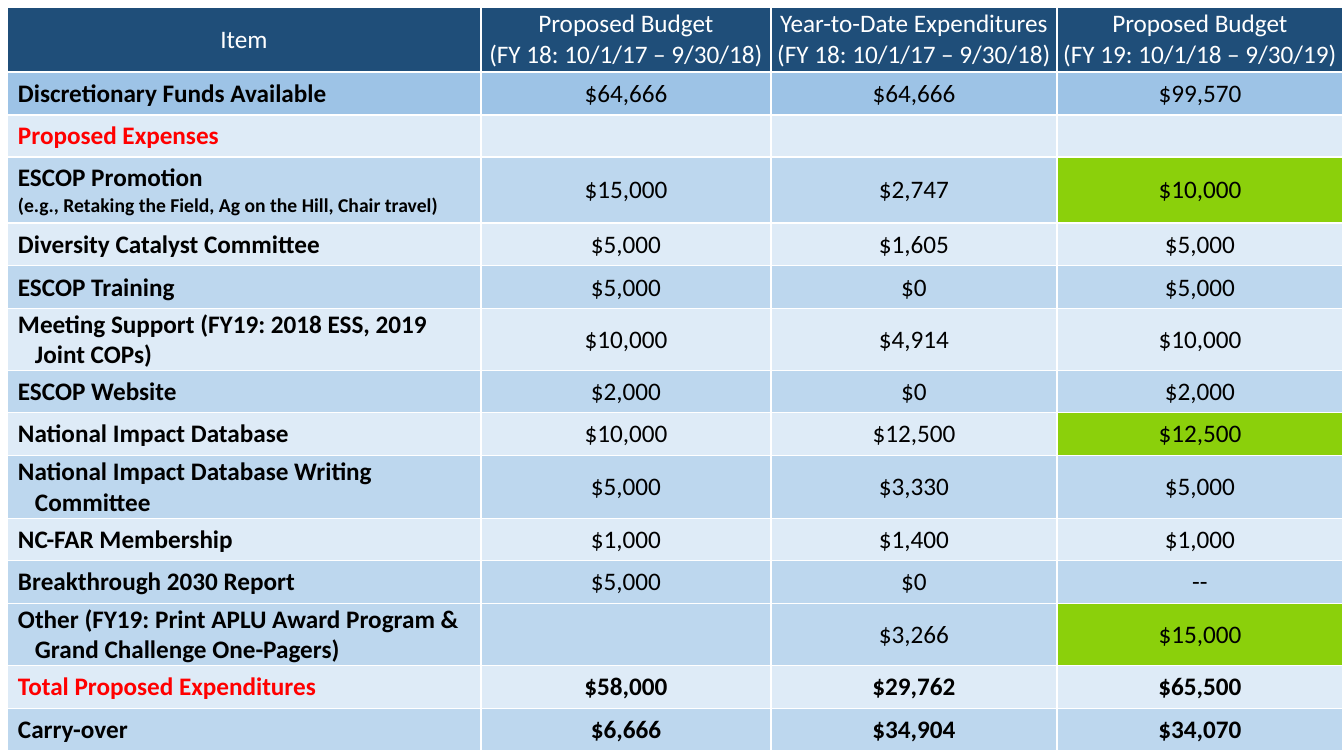
from lxml.etree import SubElement
from pptx import Presentation
from pptx.dml.color import RGBColor
from pptx.enum.text import MSO_ANCHOR, PP_ALIGN
from pptx.oxml.ns import qn
from pptx.util import Pt

PX = 9071  # EMU per px, 100.8 px to the inch

WHITE = RGBColor(0xFF, 0xFF, 0xFF)
BLACK = RGBColor(0x00, 0x00, 0x00)
RED = RGBColor(0xFF, 0x00, 0x00)
NAVY = RGBColor(0x1F, 0x4E, 0x79)
BLUE = RGBColor(0x9D, 0xC3, 0xE6)
MID = RGBColor(0xBD, 0xD7, 0xEE)
PALE = RGBColor(0xDE, 0xEB, 0xF7)
GREEN = RGBColor(0x8B, 0xD0, 0x0B)

COLUMN_WIDTHS = [474, 290, 286, 286]
FY18 = "(FY 18: 10/1/17 – 9/30/18)"
FY19 = "(FY 19: 10/1/18 – 9/30/19)"

# Row height, row fill, then the four cell texts
BUDGET = [
    (65, NAVY, "Item", f"Proposed Budget\n{FY18}",
     f"Year-to-Date Expenditures\n{FY18}", f"Proposed Budget\n{FY19}"),
    (43, BLUE, "Discretionary Funds Available", "$64,666", "$64,666", "$99,570"),
    (42, PALE, "Proposed Expenses", "", "", ""),
    (66, MID, "ESCOP Promotion\n(e.g., Retaking the Field, Ag on the Hill, Chair travel)",
     "$15,000", "$2,747", "$10,000"),
    (43, PALE, "Diversity Catalyst Committee", "$5,000", "$1,605", "$5,000"),
    (43, MID, "ESCOP Training", "$5,000", "$0", "$5,000"),
    (62, PALE, "Meeting Support (FY19: 2018 ESS, 2019\nJoint COPs)",
     "$10,000", "$4,914", "$10,000"),
    (42, MID, "ESCOP Website", "$2,000", "$0", "$2,000"),
    (43, PALE, "National Impact Database", "$10,000", "$12,500", "$12,500"),
    (63, MID, "National Impact Database Writing\nCommittee", "$5,000", "$3,330", "$5,000"),
    (42, PALE, "NC-FAR Membership", "$1,000", "$1,400", "$1,000"),
    (43, MID, "Breakthrough 2030 Report", "$5,000", "$0", "--"),
    (62, MID, "Other (FY19: Print APLU Award Program &\nGrand Challenge One-Pagers)",
     "", "$3,266", "$15,000"),
    (43, PALE, "Total Proposed Expenditures", "$58,000", "$29,762", "$65,500"),
    (42, MID, "Carry-over", "$6,666", "$34,904", "$34,070"),
]
RED_ITEMS = {"Proposed Expenses", "Total Proposed Expenditures"}
SUMMARY_ITEMS = {"Total Proposed Expenditures", "Carry-over"}
RAISED_ROWS = {3, 8, 12}  # FY 19 amounts marked in green


def add_white_borders(cell):
    properties = cell._tc.get_or_add_tcPr()
    for position, side in enumerate(("a:lnL", "a:lnR", "a:lnT", "a:lnB")):
        border = SubElement(properties, qn(side), w=str(Pt(1)))
        line_fill = SubElement(border, qn("a:solidFill"))
        SubElement(line_fill, qn("a:srgbClr"), val=str(WHITE))
        properties.insert(position, border)  # borders come before the fill


# Slide
deck = Presentation()
deck.slide_width, deck.slide_height = 1344 * PX, 756 * PX
slide = deck.slides.add_slide(deck.slide_layouts[6])

# Budget table
budget = slide.shapes.add_table(
    len(BUDGET), len(COLUMN_WIDTHS), 7 * PX, 7 * PX,
    sum(COLUMN_WIDTHS) * PX, sum(row[0] for row in BUDGET) * PX).table
for column, width in zip(budget.columns, COLUMN_WIDTHS):
    column.width = width * PX

for r, (height, row_fill, *texts) in enumerate(BUDGET):
    budget.rows[r].height = height * PX
    item = texts[0]
    for c, text in enumerate(texts):
        is_header = r == 0
        is_item = c == 0 and not is_header
        cell = budget.cell(r, c)
        cell.margin_left = 11 * PX if is_item else 0
        cell.margin_right = cell.margin_top = cell.margin_bottom = 0
        cell.vertical_anchor = MSO_ANCHOR.MIDDLE
        cell.fill.solid()
        cell.fill.fore_color.rgb = GREEN if c == 3 and r in RAISED_ROWS else row_fill
        add_white_borders(cell)

        cell.text = text
        for line, paragraph in enumerate(cell.text_frame.paragraphs):
            is_note = paragraph.text.startswith("(e.g.")
            paragraph.alignment = PP_ALIGN.LEFT if is_item else PP_ALIGN.CENTER
            if is_item and line and not is_note:  # indent the continuation line
                paragraph._p.get_or_add_pPr().set("marL", str(17 * PX))
            font = paragraph.font
            font.name = "Calibri"
            font.size = Pt(14 if is_note else 18)
            font.bold = is_item or item in SUMMARY_ITEMS
            if is_header:
                font.color.rgb = WHITE
            else:
                font.color.rgb = RED if is_item and item in RED_ITEMS else BLACK

deck.save("out.pptx")
